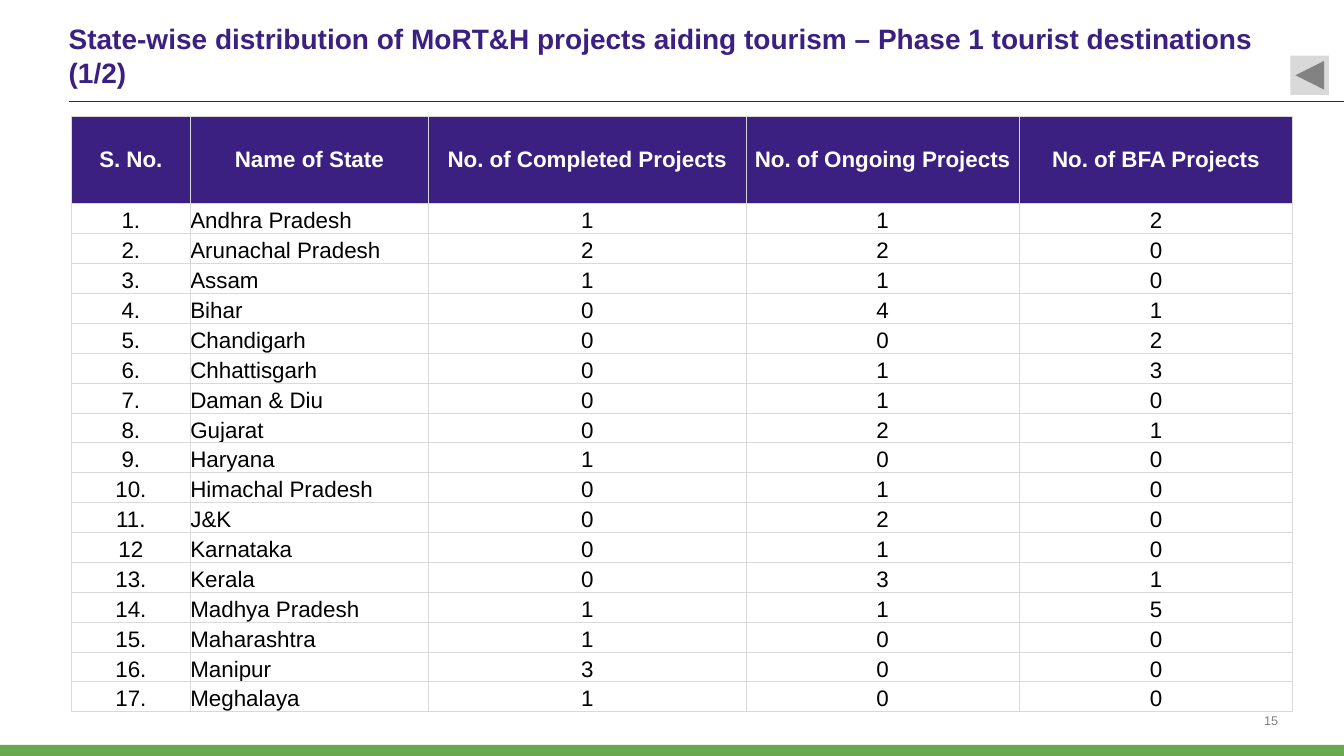
import pptx
import pptx.dml.color
import pptx.enum.shapes
import pptx.enum.text
import pptx.oxml
import pptx.oxml.ns
import pptx.util
from dataclasses import dataclass

Pt = pptx.util.Pt
RGB = pptx.dml.color.RGBColor.from_string
ALIGN = pptx.enum.text.PP_ALIGN
ANCHOR = pptx.enum.text.MSO_ANCHOR
SHAPE = pptx.enum.shapes.MSO_SHAPE


@dataclass(frozen=True)
class Theme:
    font: str = "Arial"
    purple: str = "3B2082"
    green: str = "6AA84F"
    grid: str = "D9D9D9"
    grey: str = "808080"
    white: str = "FFFFFF"
    black: str = "000000"
    title_size: int = 20
    table_size: int = 16
    number_size: int = 9


THEME = Theme()

TITLE = ("State-wise distribution of MoRT&H projects aiding tourism "
         "– Phase 1 tourist destinations (1/2)")
HEADERS = ["S. No.", "Name of State", "No. of Completed Projects",
           "No. of Ongoing Projects", "No. of BFA Projects"]
STATES = [
    ("1.", "Andhra Pradesh", 1, 1, 2),
    ("2.", "Arunachal Pradesh", 2, 2, 0),
    ("3.", "Assam", 1, 1, 0),
    ("4.", "Bihar", 0, 4, 1),
    ("5.", "Chandigarh", 0, 0, 2),
    ("6.", "Chhattisgarh", 0, 1, 3),
    ("7.", "Daman & Diu", 0, 1, 0),
    ("8.", "Gujarat", 0, 2, 1),
    ("9.", "Haryana", 1, 0, 0),
    ("10.", "Himachal Pradesh", 0, 1, 0),
    ("11.", "J&K", 0, 2, 0),
    ("12", "Karnataka", 0, 1, 0),
    ("13.", "Kerala", 0, 3, 1),
    ("14.", "Madhya Pradesh", 1, 1, 5),
    ("15.", "Maharashtra", 1, 0, 0),
    ("16.", "Manipur", 3, 0, 0),
    ("17.", "Meghalaya", 1, 0, 0),
]
COLUMN_WIDTHS = [85, 170, 227, 195, 195.5]
HEADER_HEIGHT = 62.5
ROW_HEIGHT = 21.35
NO_MARGINS = dict.fromkeys(
    ["margin_left", "margin_top", "margin_right", "margin_bottom"], 0)


def set_attributes(target, values):
    for name, value in values.items():
        setattr(target, name, value)


def write(tf, text, size, color, bold=False, align=ALIGN.LEFT):
    p = tf.paragraphs[0]
    p.alignment = align
    r = p.add_run()
    r.text = text
    set_attributes(r.font, {"name": THEME.font, "size": Pt(size), "bold": bold})
    r.font.color.rgb = RGB(color)


def place(sp, left, top, width, height):
    set_attributes(sp, {"left": Pt(left), "top": Pt(top),
                        "width": Pt(width), "height": Pt(height)})


def add_title(slide):
    sp = slide.shapes.title
    place(sp, 49, 8.5, 872.5, 62)
    set_attributes(sp.text_frame, {
        **NO_MARGINS, "word_wrap": True, "vertical_anchor": ANCHOR.MIDDLE,
        "auto_size": pptx.enum.text.MSO_AUTO_SIZE.NONE})
    write(sp.text_frame, TITLE, THEME.title_size, THEME.purple, bold=True)


def add_rule(slide):
    line = slide.shapes.add_connector(
        pptx.enum.shapes.MSO_CONNECTOR.STRAIGHT, Pt(49), Pt(72.5), Pt(960), Pt(72.5))
    line.line.color.rgb = RGB(THEME.purple)
    line.line.width = Pt(1)
    pptx.oxml.ns.qn("a:effectLst")
    line._element.spPr.append(pptx.oxml.parse_xml(
        f"<a:effectLst {pptx.oxml.ns.nsdecls('a')}/>"))


def add_filled_shape(slide, kind, box, color, rotation=0):
    sp = slide.shapes.add_shape(kind, *map(Pt, box))
    sp.shadow.inherit = False
    sp.fill.solid()
    sp.fill.fore_color.rgb = RGB(color)
    sp.line.fill.background()
    sp.rotation = rotation


def add_page_number(slide, number):
    sp = slide.shapes.add_textbox(Pt(831), Pt(506), Pt(82), Pt(14))
    set_attributes(sp.text_frame, {
        **NO_MARGINS, "word_wrap": True, "vertical_anchor": ANCHOR.BOTTOM})
    write(sp.text_frame, number, THEME.number_size, THEME.grey, align=ALIGN.RIGHT)


def add_borders(cell):
    tcPr = cell._tc.get_or_add_tcPr()
    for side in "LRTB":
        tcPr.append(pptx.oxml.parse_xml(
            f'<a:ln{side} {pptx.oxml.ns.nsdecls("a")} w="{Pt(0.5)}"><a:solidFill>'
            f'<a:srgbClr val="{THEME.grid}"/></a:solidFill></a:ln{side}>'))


def format_cell(cell, text, is_header, align):
    set_attributes(cell, {
        **NO_MARGINS,
        "vertical_anchor": ANCHOR.MIDDLE if is_header else ANCHOR.BOTTOM})
    add_borders(cell)
    if is_header:
        cell.fill.solid()
        cell.fill.fore_color.rgb = RGB(THEME.purple)
    else:
        cell.fill.background()
    write(cell.text_frame, text, THEME.table_size,
          THEME.white if is_header else THEME.black, is_header, align)


def add_state_table(slide):
    rows = [HEADERS, *STATES]
    heights = [HEADER_HEIGHT] + [ROW_HEIGHT] * len(STATES)
    table = slide.shapes.add_table(
        len(rows), len(HEADERS), Pt(51), Pt(83),
        Pt(sum(COLUMN_WIDTHS)), Pt(sum(heights))).table
    set_attributes(table, {"first_row": False, "horz_banding": False})
    for column, width in zip(table.columns, COLUMN_WIDTHS):
        column.width = Pt(width)
    for i, (values, height) in enumerate(zip(rows, heights)):
        table.rows[i].height = Pt(height)
        for j, value in enumerate(values):
            is_state_name = i > 0 and j == 1
            format_cell(table.cell(i, j), str(value), i == 0,
                        ALIGN.LEFT if is_state_name else ALIGN.CENTER)


def main():
    prs = pptx.Presentation()
    set_attributes(prs, {"slide_width": Pt(960), "slide_height": Pt(540)})
    slide = prs.slides.add_slide(prs.slide_layouts[5])
    add_rule(slide)
    add_page_number(slide, "15")
    add_filled_shape(slide, SHAPE.RECTANGLE, (0, 532, 960, 8), THEME.green)
    add_title(slide)
    add_state_table(slide)
    add_filled_shape(slide, SHAPE.ACTION_BUTTON_FORWARD_OR_NEXT,
                     (921.75, 39.75, 27.5, 28), THEME.grid, rotation=180)
    prs.save("out.pptx")


if __name__ == "__main__":
    main()
